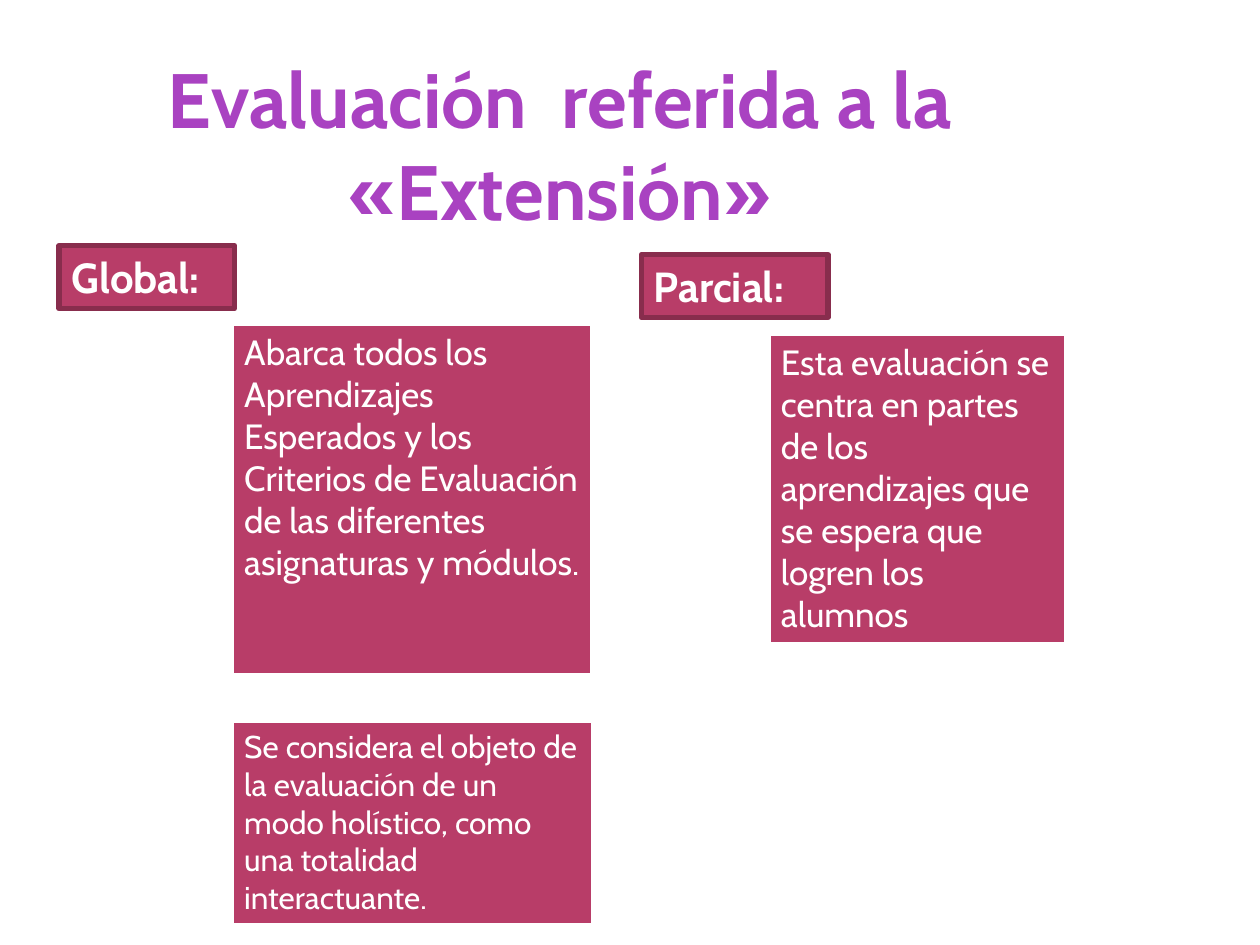
from pptx import Presentation
from pptx.util import Inches, Pt
from pptx.dml.color import RGBColor
from pptx.enum import shapes, text

COLORS = {"title": "A942C1", "box": "B83D68", "label_line": "882D4D", "white": "FFFFFF"}
FONT = "Cabin"

# Content: text and position (left, top, width, height)
TITLE = ("Evaluación  referida a la «Extensión»", (0.43, 0.36, 8.03, 1.58))
LABELS = [
    ("Global:", (0.47, 1.95, 1.39, 0.5)),
    ("Parcial:", (5.09, 2.02, 1.48, 0.5)),
]
# Descriptions also carry their text size
DESCRIPTIONS = [
    ("Abarca todos los Aprendizajes Esperados y los Criterios de Evaluación "
     "de las diferentes asignaturas y módulos.", (1.84, 2.57, 2.86, 2.79), 20),
    ("Se considera el objeto de la evaluación de un modo holístico, como una "
     "totalidad interactuante.", (1.84, 5.72, 2.87, 1.62), 18),
    ("Esta evaluación se centra en partes de los aprendizajes que se espera "
     "que logren los alumnos", (6.1, 2.65, 2.36, 2.46), 20),
]


def color(name):
    return RGBColor.from_string(COLORS[name])


def write(shape, words, size, font_color="white", bold=False, align=text.PP_ALIGN.LEFT):
    frame = shape.text_frame
    frame.word_wrap = True
    frame.auto_size = text.MSO_AUTO_SIZE.NONE
    frame.vertical_anchor = text.MSO_ANCHOR.TOP
    frame.margin_left = frame.margin_right = Inches(0.1)
    frame.margin_top = frame.margin_bottom = Inches(0.05)
    paragraph = frame.paragraphs[0]
    paragraph.alignment = align
    paragraph.line_spacing = 1.0
    paragraph.space_before = Pt(0)
    run = paragraph.add_run()
    run.text = words
    run.font.name = FONT
    run.font.size = Pt(size)
    run.font.bold = bold
    run.font.color.rgb = color(font_color)


def add_box(slide, position, line_color, line_width):
    box = slide.shapes.add_shape(shapes.MSO_SHAPE.RECTANGLE, *map(Inches, position))
    box.shadow.inherit = False
    box.fill.solid()
    box.fill.fore_color.rgb = color("box")
    box.line.color.rgb = color(line_color)
    box.line.width = Pt(line_width)
    return box


def main():
    presentation = Presentation()
    presentation.slide_width, presentation.slide_height = Inches(10), Inches(7.5)
    slide = presentation.slides.add_slide(presentation.slide_layouts[5])

    # Title
    words, position = TITLE
    title = slide.shapes.title
    title.left, title.top, title.width, title.height = map(Inches, position)
    write(title, words, 44, font_color="title", bold=True, align=text.PP_ALIGN.CENTER)

    # Type labels
    for words, position in LABELS:
        write(add_box(slide, position, "label_line", 3.15), words, 24, bold=True)

    # Descriptions
    for words, position, size in DESCRIPTIONS:
        write(add_box(slide, position, "white", 2.5), words, size)

    presentation.save("out.pptx")


if __name__ == "__main__":
    main()
